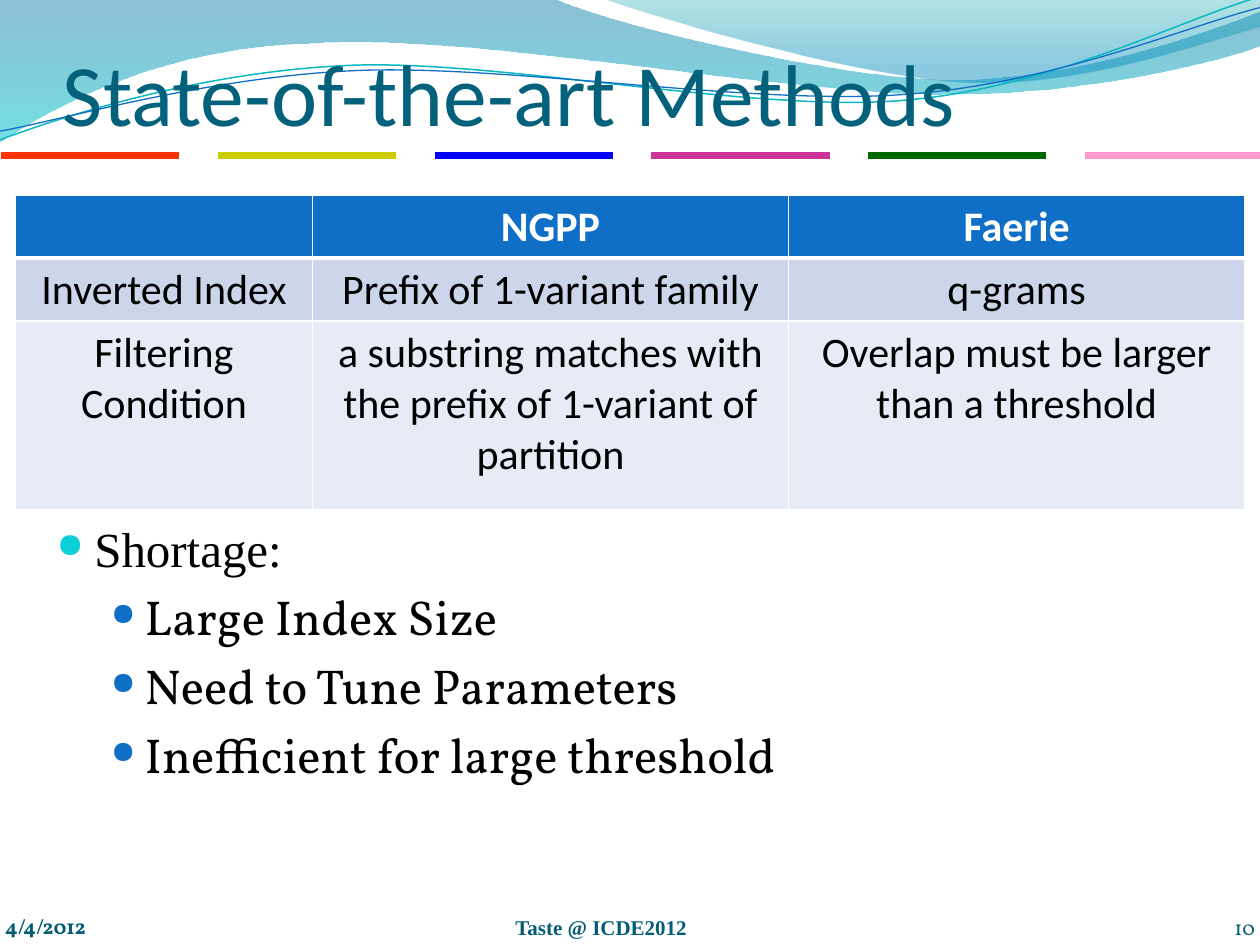
from dataclasses import dataclass

from lxml import etree
from pptx import Presentation
from pptx.dml.color import RGBColor
from pptx.enum.shapes import MSO_CONNECTOR
from pptx.enum.text import MSO_ANCHOR, PP_ALIGN
from pptx.oxml.ns import qn
from pptx.slide import Slide
from pptx.util import Pt

STRAIGHT = MSO_CONNECTOR.STRAIGHT
BOTTOM = MSO_ANCHOR.BOTTOM
TOP = MSO_ANCHOR.TOP
LEFT = PP_ALIGN.LEFT
CENTER = PP_ALIGN.CENTER
RIGHT = PP_ALIGN.RIGHT

COLORS = {
    "title": "04617B", "footer": "045D75", "text": "000000", "white": "FFFFFF",
    "blue": "0F6FC6", "cyan": "0BD0D9", "teal_line": "0AB8BF",
    "band_dark": "CCD5EA", "band_light": "E7EBF5",
    "wave_blue": "0074A1", "wave_cyan": "00C6CF",
    "crest_teal": "00A1A9", "crest_blue": "008BBF",
}
RULE_COLORS = ["FF3300", "CCCC00", "0000FF", "CC3399", "006600", "FF99CC"]

WAVE = [
    [(0, 0)], [(316.8, -0.7)],
    [(342.7, 12.2), (478.1, 45.4), (545.8, 45.4)],
    [(614.2, 45.4), (689.8, 18.7), (720, 6.5)],
    [(720.7, 25.9)],
    [(707.8, 31.7), (626.4, 54.7), (537.1, 54)],
    [(447.8, 54), (275, 20.2), (185, 24.5)],
    [(92.9, 25.9), (33.1, 59.8), (-0.7, 81.4)],
]
CREST = [
    [(344.9, -0.7)],
    [(366.5, 7.9), (491, 44.6), (553.7, 46.8)],
    [(616.3, 49.7), (691.9, 23), (720, 15.1)],
    [(720, 0)],
]
TEAL_CURVE = [
    [(0, 79.9)],
    [(34.6, 67), (113.8, 41), (199.4, 37.4)],
    [(284.4, 33.8), (427, 64.1), (513.4, 57.6)],
    [(599.8, 51.1), (675.4, 10.8), (718.6, -1.4)],
]
BLUE_CURVE = [
    [(0, 74.9)],
    [(33.8, 69.1), (118.1, 43.9), (203.8, 40.3)],
    [(290.2, 36.7), (429.8, 60.5), (516.2, 54)],
    [(601.9, 48.2), (677.5, 15.1), (720, 4.3)],
]
TABLE_ROWS = [
    ["", "NGPP", "Faerie"],
    ["Inverted Index", "Prefix of 1-variant family", "q-grams"],
    ["Filtering Condition",
     "a substring matches with the prefix of 1-variant of partition",
     "Overlap must be larger than a threshold"],
]
SHORTAGES = ["Large Index Size", "Need to Tune Parameters", "Inefficient for large threshold"]


def rgb(color):
    return RGBColor.from_string(COLORS.get(color, color))


@dataclass
class Painter:
    slide: Slide
    sans: str = "Calibri"
    serif: str = "Times New Roman"
    book: str = "Vollkorn"

    def font(self, para, name, size, color, bold=False):
        para.font.name = name
        para.font.size = Pt(size)
        para.font.bold = bold
        para.font.color.rgb = rgb(color)

    def outline(self, segments, closed):
        ends = [(Pt(x), Pt(y)) for x, y in (segment[-1] for segment in segments)]
        builder = self.slide.shapes.build_freeform(*ends[0])
        builder.add_line_segments(ends[1:], close=closed)
        shape = builder.convert_to_shape()
        shape.shadow.inherit = False
        steps = list(shape.element.iter(qn("a:lnTo")))
        for step, segment in zip(steps, segments[1:]):
            if len(segment) == 3:
                bend = etree.Element(qn("a:cubicBezTo"))
                for x, y in segment:
                    etree.SubElement(bend, qn("a:pt"), x=str(Pt(x) - shape.left),
                                     y=str(Pt(y) - shape.top))
                step.getparent().replace(step, bend)
        return shape

    def wave(self, segments, stops):
        shape = self.outline(segments, True)
        shape.line.fill.background()
        shape.fill.gradient()
        shape.fill.gradient_angle = 270
        for stop, (position, color, opacity) in zip(shape.fill.gradient_stops, stops):
            stop.position = position
            stop.color.rgb = rgb(color)
        for node, (position, color, opacity) in zip(shape.element.iter(qn("a:srgbClr")), stops):
            etree.SubElement(node, qn("a:alpha"), val=str(opacity * 1000))

    def curve(self, segments, color, width):
        shape = self.outline(segments, False)
        shape.fill.background()
        shape.line.color.rgb = rgb(color)
        shape.line.width = Pt(width)

    def rule(self, left, top, length, color):
        line = self.slide.shapes.add_connector(
            STRAIGHT, Pt(left), Pt(top), Pt(left + length), Pt(top))
        line.line.color.rgb = rgb(color)
        line.line.width = Pt(4)
        etree.SubElement(line.element.spPr, qn("a:effectLst"))

    def frame(self, left, top, width, height, anchor, side=0, above=0):
        box = self.slide.shapes.add_textbox(Pt(left), Pt(top), Pt(width), Pt(height))
        frame = box.text_frame
        frame.word_wrap = True
        frame.vertical_anchor = anchor
        frame.margin_left = frame.margin_right = Pt(side)
        frame.margin_top, frame.margin_bottom = Pt(above), Pt(0)
        return frame

    def label(self, area, text, name, size, color, bold=False, align=LEFT):
        para = self.frame(*area, BOTTOM).paragraphs[0]
        para.text = text
        para.alignment = align
        self.font(para, name, size, color, bold)

    def bullet(self, para, text, name, level, margin, hanging, color, scale):
        para.text = text
        para.level = level
        properties = para._p.get_or_add_pPr()
        properties.set("marL", str(Pt(margin)))
        properties.set("indent", str(Pt(-hanging)))
        if level:
            spacing = etree.SubElement(properties, qn("a:spcBef"))
            etree.SubElement(spacing, qn("a:spcPct"), val="20000")
        tint = etree.SubElement(properties, qn("a:buClr"))
        etree.SubElement(tint, qn("a:srgbClr"), val=COLORS[color])
        etree.SubElement(properties, qn("a:buSzPct"), val=str(scale * 1000))
        etree.SubElement(properties, qn("a:buChar"), char="●")
        self.font(para, name, 28, "text")

    def cell(self, cell, text, fill, color, bold, top, bottom):
        properties = cell._tc.get_or_add_tcPr()
        for side, width in (("L", 1), ("R", 1), ("T", top), ("B", bottom)):
            border = etree.SubElement(properties, qn(f"a:ln{side}"), w=str(Pt(width)))
            paint = etree.SubElement(border, qn("a:solidFill"))
            etree.SubElement(paint, qn("a:srgbClr"), val=COLORS["white"])
        cell.fill.solid()
        cell.fill.fore_color.rgb = rgb(fill)
        para = cell.text_frame.paragraphs[0]
        para.text = text
        para.alignment = CENTER
        self.font(para, self.sans, 24, color, bold)

    def table(self, left, top, widths, heights, rows):
        table = self.slide.shapes.add_table(
            len(rows), len(widths), Pt(left), Pt(top),
            Pt(sum(widths)), Pt(sum(heights))).table
        for column, width in zip(table.columns, widths):
            column.width = Pt(width)
        for row, height in zip(table.rows, heights):
            row.height = Pt(height)
        looks = [("blue", "white", True, 1, 3), ("band_dark", "text", False, 3, 1),
                 ("band_light", "text", False, 1, 1)]
        for row, texts, look in zip(table.rows, rows, looks):
            for cell, text in zip(row.cells, texts):
                self.cell(cell, text, *look)


def main():
    deck = Presentation()
    deck.slide_width, deck.slide_height = Pt(720), Pt(540)
    page = Painter(deck.slides.add_slide(deck.slide_layouts[6]))

    page.wave(WAVE, [(0, "wave_blue", 45), (1, "wave_cyan", 55)])
    page.wave(CREST, [(0, "crest_teal", 30), (0.8, "crest_blue", 45)])
    page.curve(TEAL_CURVE, "teal_line", 0.85)
    page.curve(BLUE_CURVE, "blue", 0.75)
    for index, color in enumerate(RULE_COLORS):
        page.rule(0.7 + index * 123.84, 88.6, 101.8, color)

    page.label((36, -8, 648, 90), "State-of-the-art Methods", page.sans, 50, "title")

    body = page.frame(25.2, 109.4, 726.5, 380, TOP, 7.2, 222.2)
    page.bullet(body.paragraphs[0], "Shortage:", page.serif, 0, 21.6, 21.6, "cyan", 70)
    for text in SHORTAGES:
        page.bullet(body.add_paragraph(), text, page.book, 1, 50.4, 19.4, "blue", 64)

    page.label((2.9, 507.6, 168, 28.8), "4/4/2012", page.book, 12, "footer", True)
    page.label((294.5, 508.3, 264, 28.8), "Taste @ ICDE2012", page.serif, 12, "footer", True)
    page.table(8.8, 111.4, [169.8, 272, 260.8], [31.7, 31.7, 107.6], TABLE_ROWS)
    page.label((657.4, 508.3, 59.8, 28.8), "10", page.book, 12, "footer", align=RIGHT)
    deck.save("out.pptx")


if __name__ == "__main__":
    main()
